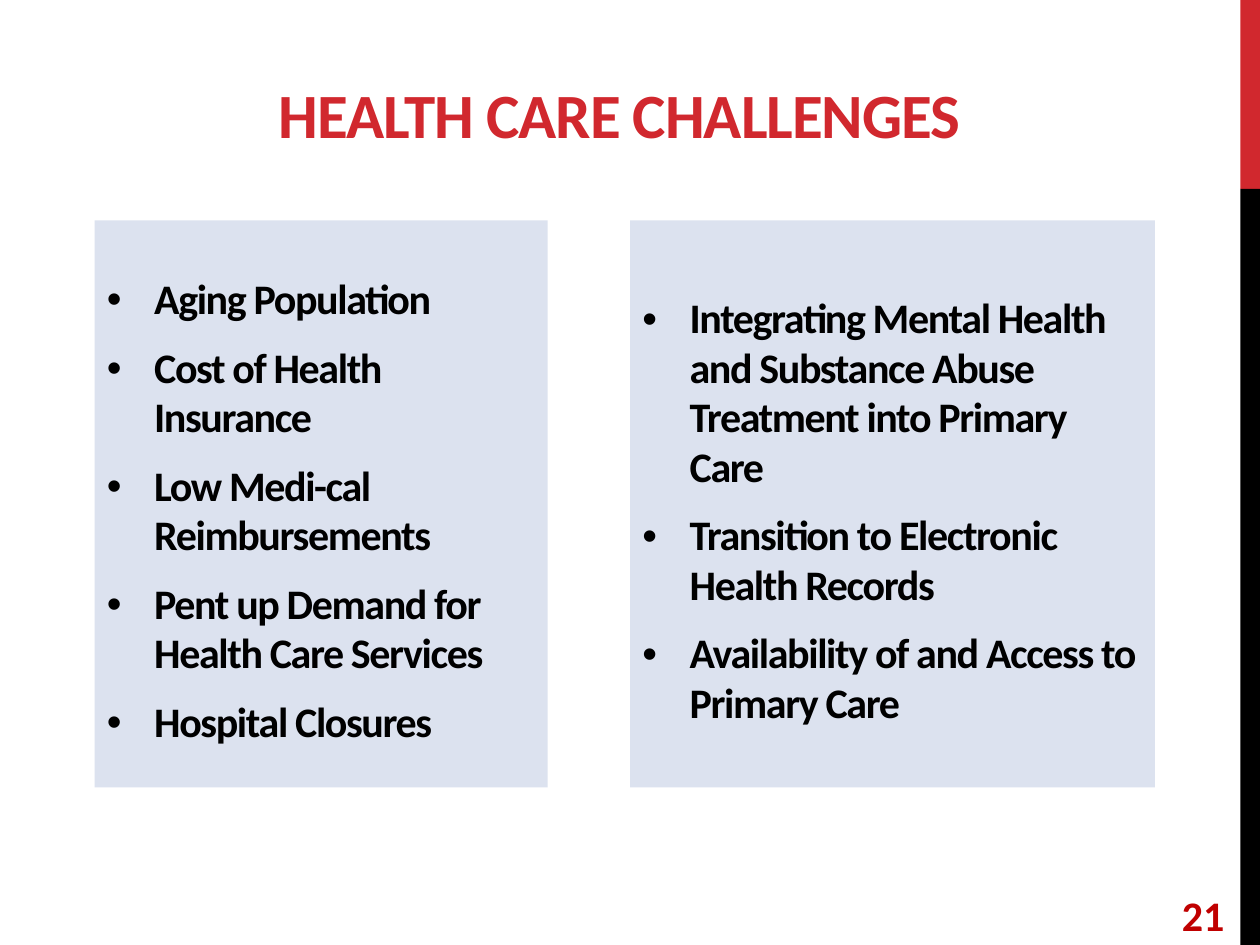
import pptx
import pptx.util
import pptx.dml.color
import pptx.enum.shapes
import pptx.enum.text
import pptx.oxml.ns
import lxml.etree

Pt = pptx.util.Pt
ALIGN = pptx.enum.text.PP_ALIGN
ANCHOR = pptx.enum.text.MSO_ANCHOR
RED, BLACK, PALE, DARK = "D1282E", "000000", "DCE2EF", "C00000"

LEFT = [
    "Aging Population",
    "Cost of Health Insurance",
    "Low Medi-cal Reimbursements",
    "Pent up Demand for Health Care Services",
    "Hospital Closures",
]
RIGHT = [
    "Integrating Mental Health and Substance Abuse Treatment into Primary Care",
    "Transition to Electronic Health Records",
    "Availability of and Access to Primary Care",
]


def color(code):
    return pptx.dml.color.RGBColor.from_string(code)


def add_run(para, text, size, code, track=0):
    """Add bold text; track is the letter spacing in points."""
    run = para.add_run()
    run.text = text
    font = run.font
    font.name, font.size, font.bold = "Calibri", Pt(size), True
    font.color.rgb = color(code)
    if track:
        font._element.set("spc", str(round(track * 100)))


def add_rect(slide, x, y, w, h, code):
    kind = pptx.enum.shapes.MSO_SHAPE.RECTANGLE
    rect = slide.shapes.add_shape(kind, Pt(x), Pt(y), Pt(w), Pt(h))
    rect.shadow.inherit = False
    rect.fill.solid()
    rect.fill.fore_color.rgb = color(code)
    rect.line.fill.background()
    return rect


def add_bullet(para, indent):
    props = para._p.get_or_add_pPr()
    props.set("marL", str(Pt(indent)))
    props.set("indent", str(-Pt(indent)))
    font = lxml.etree.SubElement(props, pptx.oxml.ns.qn("a:buFont"))
    font.set("typeface", "Arial")
    mark = lxml.etree.SubElement(props, pptx.oxml.ns.qn("a:buChar"))
    mark.set("char", "•")


def add_panel(slide, x, w, items):
    """Add a tinted panel with a bulleted list."""
    frame = add_rect(slide, x, 126, w, 324, PALE).text_frame
    frame.word_wrap = True
    frame.vertical_anchor = ANCHOR.MIDDLE
    frame.margin_top = Pt(12)
    for i, item in enumerate(items):
        para = frame.paragraphs[0] if i == 0 else frame.add_paragraph()
        para.alignment = ALIGN.LEFT
        para.line_spacing = 0.98
        para.space_before, para.space_after = Pt(5), Pt(6)
        add_bullet(para, 27)
        add_run(para, item, 24, BLACK, -0.8)


def set_title(slide, text):
    title = slide.shapes.title
    title.left, title.top = Pt(126), Pt(30)
    title.width, title.height = Pt(456), Pt(60)
    frame = title.text_frame
    frame.auto_size = pptx.enum.text.MSO_AUTO_SIZE.NONE
    frame.vertical_anchor = ANCHOR.BOTTOM
    frame.paragraphs[0].alignment = ALIGN.CENTER
    add_run(frame.paragraphs[0], text, 36, RED, -0.6)


def add_number(slide, text):
    box = slide.shapes.add_textbox(Pt(667.5), Pt(505), Pt(40), Pt(35))
    frame = box.text_frame
    frame.word_wrap = True
    frame.vertical_anchor = ANCHOR.MIDDLE
    frame.paragraphs[0].alignment = ALIGN.CENTER
    add_run(frame.paragraphs[0], text, 24, DARK)


def main():
    deck = pptx.Presentation()
    deck.slide_width, deck.slide_height = Pt(720), Pt(540)
    slide = deck.slides.add_slide(deck.slide_layouts[5])

    # Side stripe
    add_rect(slide, 708.75, 0, 11.25, 108, RED)
    add_rect(slide, 708.75, 108, 11.25, 432, BLACK)

    # Heading, lists and page number
    set_title(slide, "HEALTH CARE CHALLENGES")
    add_panel(slide, 54, 259, LEFT)
    add_panel(slide, 360, 300, RIGHT)
    add_number(slide, "21")

    deck.save("out.pptx")


if __name__ == "__main__":
    main()
